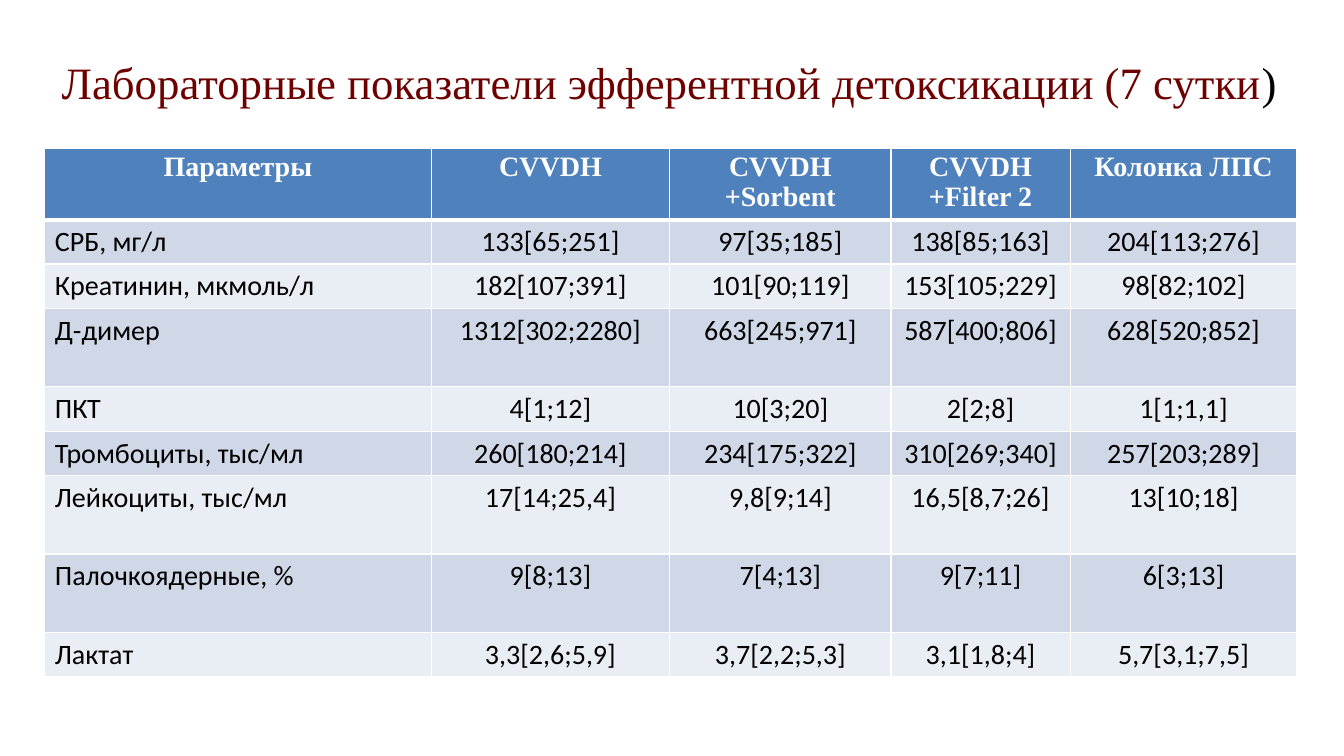
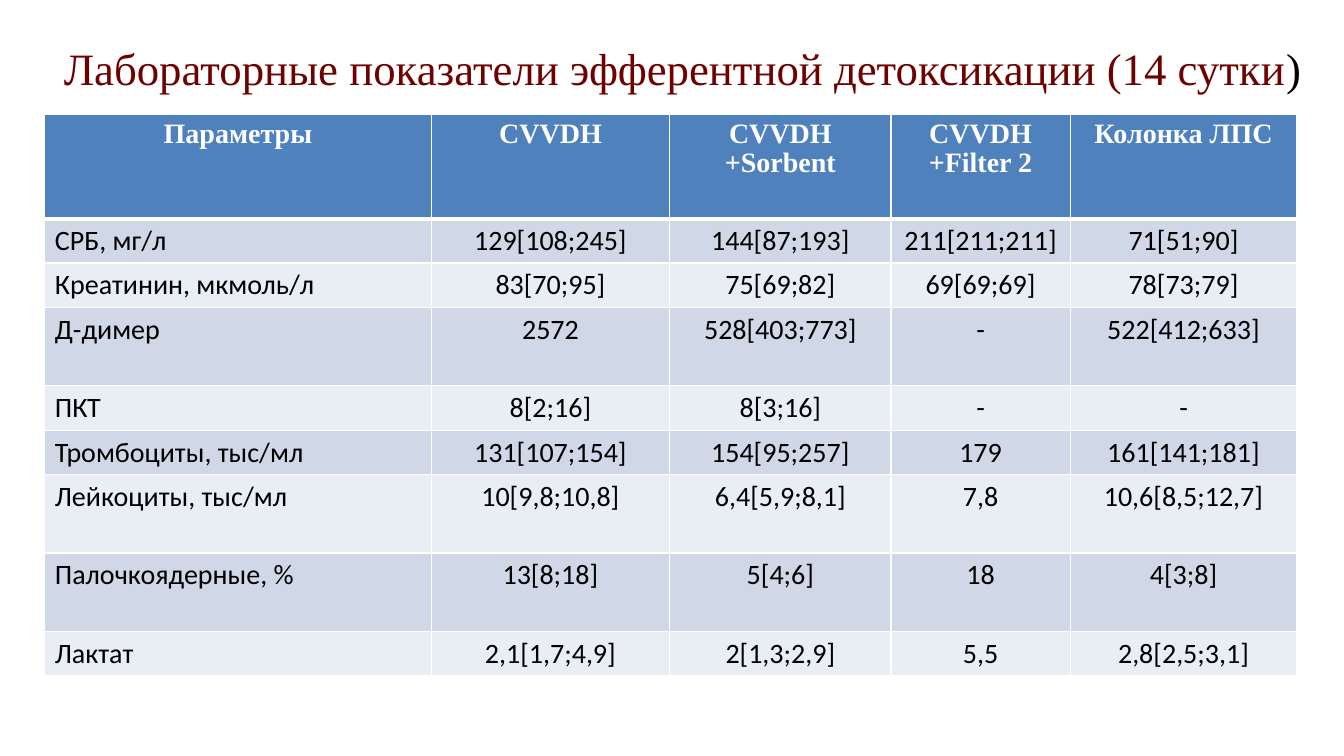
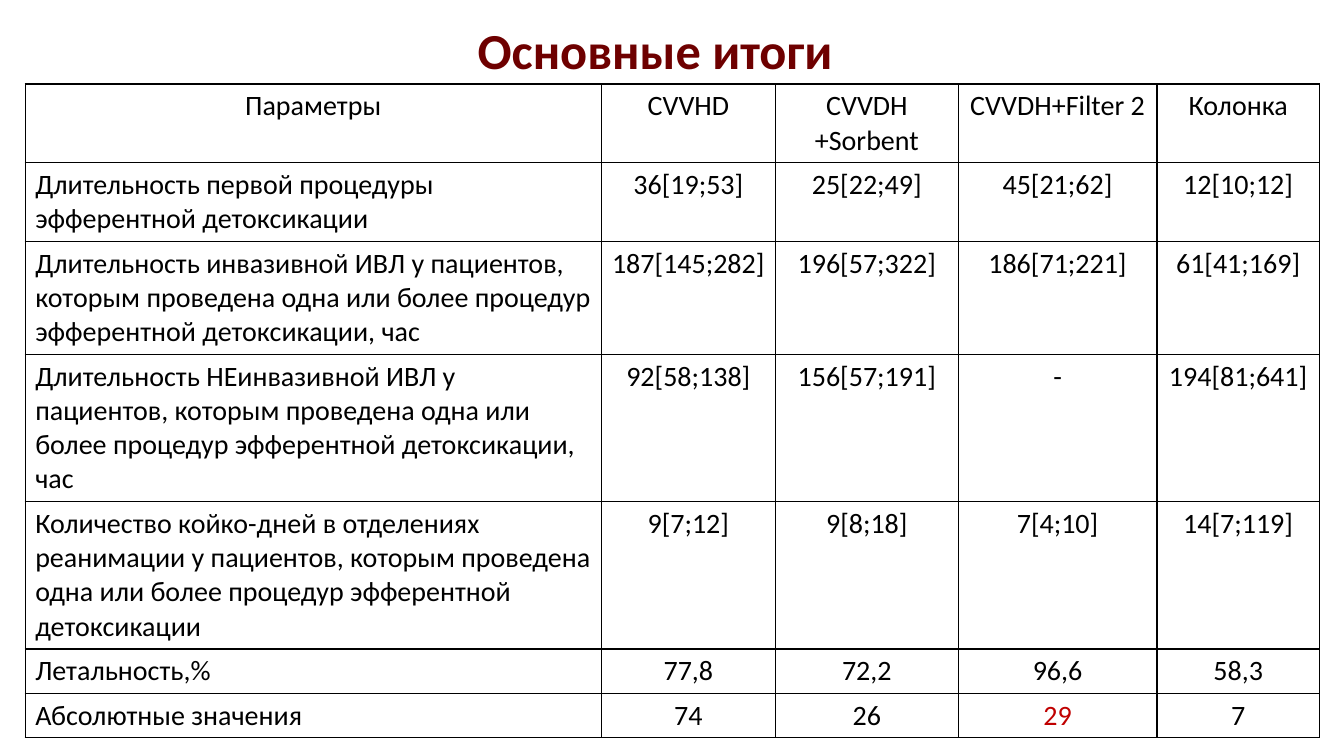
"""Build three slides with tables of laboratory indicators and overall results."""
from lxml.etree import SubElement
from pptx import Presentation
from pptx.dml.color import RGBColor
from pptx.enum.text import MSO_ANCHOR, MSO_AUTO_SIZE, PP_ALIGN
from pptx.oxml.ns import qn
from pptx.util import Pt

COLORS = {
    "title": "6E0000",
    "black": "000000",
    "white": "FFFFFF",
    "header": "4F81BD",
    "odd": "D0D8E8",
    "even": "E9EDF4",
    "alert": "C00000",
}
SERIF, SANS = "Times New Roman", "Calibri"
TEXT_SIZE = 20
LINE_HEIGHT, CELL_PADDING = 24.4, 7.2

LAB_STYLE = {
    "title_font": SERIF, "title_size": 32, "title_bold": False,
    "left": 32, "columns": [276, 170.5, 158, 128, 162],
    "lines": [1, 1, 2, 1, 1, 2, 2, 1],
    "header_font": SERIF, "header_color": "white", "header_bold": True,
    "header_spacing": 0.95, "header_border": 3,
    "fills": ["header", "odd", "even"], "border": "white",
}
RESULT_STYLE = {
    "title_font": SANS, "title_size": 36, "title_bold": True,
    "left": 18, "columns": [411.5, 124.5, 130.5, 142, 116],
    "lines": [2, 3, 4, 4, 1, 1],
    "header_font": SANS, "header_color": "black", "header_bold": False,
    "header_spacing": 1, "header_border": 1,
    "fills": None, "border": "black",
}
LAB_HEADER = ["Параметры", "CVVDH", "CVVDH\n+Sorbent", "CVVDH +Filter 2", "Колонка ЛПС"]

SLIDES = [
    {
        "style": LAB_STYLE,
        "title": ["Лабораторные показатели эфферентной детоксикации (7 сутки", ")"],
        "title_box": (15, 29.5, 926, 57),
        "top": 105.7, "header_height": 51.2,
        "rows": [
            LAB_HEADER,
            ["СРБ, мг/л", "133[65;251]", "97[35;185]", "138[85;163]", "204[113;276]"],
            ["Креатинин, мкмоль/л", "182[107;391]", "101[90;119]", "153[105;229]", "98[82;102]"],
            ["Д-димер", "1312[302;2280]", "663[245;971]", "587[400;806]", "628[520;852]"],
            ["ПКТ", "4[1;12]", "10[3;20]", "2[2;8]", "1[1;1,1]"],
            ["Тромбоциты, тыс/мл", "260[180;214]", "234[175;322]", "310[269;340]", "257[203;289]"],
            ["Лейкоциты, тыс/мл", "17[14;25,4]", "9,8[9;14]", "16,5[8,7;26]", "13[10;18]"],
            ["Палочкоядерные, %", "9[8;13]", "7[4;13]", "9[7;11]", "6[3;13]"],
            ["Лактат", "3,3[2,6;5,9]", "3,7[2,2;5,3]", "3,1[1,8;4]", "5,7[3,1;7,5]"],
        ],
    },
    {
        "style": LAB_STYLE,
        "title": ["Лабораторные показатели эфферентной детоксикации (14 сутки", ")"],
        "title_box": (34, 9.5, 907, 77),
        "top": 82, "header_height": 74.2,
        "rows": [
            LAB_HEADER,
            ["СРБ, мг/л", "129[108;245]", "144[87;193]", "211[211;211]", "71[51;90]"],
            ["Креатинин, мкмоль/л", "83[70;95]", "75[69;82]", "69[69;69]", "78[73;79]"],
            ["Д-димер", "2572", "528[403;773]", "-", "522[412;633]"],
            ["ПКТ", "8[2;16]", "8[3;16]", "-", "-"],
            ["Тромбоциты, тыс/мл", "131[107;154]", "154[95;257]", "179", "161[141;181]"],
            ["Лейкоциты, тыс/мл", "10[9,8;10,8]", "6,4[5,9;8,1]", "7,8", "10,6[8,5;12,7]"],
            ["Палочкоядерные, %", "13[8;18]", "5[4;6]", "18", "4[3;8]"],
            ["Лактат", "2,1[1,7;4,9]", "2[1,3;2,9]", "5,5", "2,8[2,5;3,1]"],
        ],
    },
    {
        "style": RESULT_STYLE,
        "title": ["Основные итоги"],
        "title_box": (43, 21.5, 850, 27.5),
        "top": 60, "header_height": 56,
        "alert": (6, 3),
        "rows": [
            ["Параметры", "CVVHD", "CVVDH\n+Sorbent", "CVVDH+Filter 2", "Колонка"],
            ["Длительность первой процедуры эфферентной детоксикации",
             "36[19;53]", "25[22;49]", "45[21;62]", "12[10;12]"],
            ["Длительность инвазивной ИВЛ у пациентов, которым проведена одна "
             "или более процедур эфферентной детоксикации, час",
             "187[145;282]", "196[57;322]", "186[71;221]", "61[41;169]"],
            ["Длительность НЕинвазивной ИВЛ у пациентов, которым проведена одна "
             "или более процедур эфферентной детоксикации, час",
             "92[58;138]", "156[57;191]", "-", "194[81;641]"],
            ["Количество койко-дней в отделениях реанимации у пациентов, которым "
             "проведена одна или более процедур эфферентной детоксикации",
             "9[7;12]", "9[8;18]", "7[4;10]", "14[7;119]"],
            ["Летальность,%", "77,8", "72,2", "96,6", "58,3"],
            ["Абсолютные значения", "74", "26", "29", "7"],
        ],
    },
]


def format_run(run, font, size, color, bold):
    run.font.name = font
    run.font.size = Pt(size)
    run.font.bold = bold
    run.font.color.rgb = RGBColor.from_string(COLORS[color])


def set_borders(cell, color, top, bottom):
    properties = cell._tc.get_or_add_tcPr()
    for side, width in (("L", 1), ("R", 1), ("T", top), ("B", bottom)):
        line = SubElement(properties, qn(f"a:ln{side}"), w=str(Pt(width)))
        fill = SubElement(line, qn("a:solidFill"))
        SubElement(fill, qn("a:srgbClr"), val=COLORS[color])


presentation = Presentation()
presentation.slide_width = Pt(960)
presentation.slide_height = Pt(540)

for content in SLIDES:
    style = content["style"]
    slide = presentation.slides.add_slide(presentation.slide_layouts[5])

    title = slide.shapes.title
    title.left, title.top, title.width, title.height = map(Pt, content["title_box"])
    title.text_frame.auto_size = MSO_AUTO_SIZE.NONE
    title.text_frame.vertical_anchor = MSO_ANCHOR.MIDDLE
    paragraph = title.text_frame.paragraphs[0]
    paragraph.alignment = PP_ALIGN.CENTER
    for text, color in zip(content["title"], ("title", "black")):
        run = paragraph.add_run()
        run.text = text
        format_run(run, style["title_font"], style["title_size"], color, style["title_bold"])

    rows, columns = content["rows"], style["columns"]
    heights = [content["header_height"]]
    heights += [CELL_PADDING + LINE_HEIGHT * count for count in style["lines"]]
    table = slide.shapes.add_table(
        len(rows), len(columns), Pt(style["left"]), Pt(content["top"]),
        Pt(sum(columns)), Pt(sum(heights))).table
    table.horz_banding = False
    for column, width in zip(table.columns, columns):
        column.width = Pt(width)

    for row_index, (values, height) in enumerate(zip(rows, heights)):
        table.rows[row_index].height = Pt(height)
        is_header = row_index == 0
        for column_index, value in enumerate(values):
            cell = table.cell(row_index, column_index)
            set_borders(cell, style["border"],
                        top=style["header_border"] if row_index == 1 else 1,
                        bottom=style["header_border"] if is_header else 1)
            if style["fills"]:
                fill_index = 0 if is_header else 2 - row_index % 2
                cell.fill.solid()
                cell.fill.fore_color.rgb = RGBColor.from_string(COLORS[style["fills"][fill_index]])
            else:
                cell.fill.background()

            cell.text_frame.text = value
            font, color, bold = SANS, "black", False
            if is_header:
                font, color, bold = style["header_font"], style["header_color"], style["header_bold"]
            elif content.get("alert") == (row_index, column_index):
                color = "alert"
            for paragraph in cell.text_frame.paragraphs:
                centered = is_header or column_index > 0
                paragraph.alignment = PP_ALIGN.CENTER if centered else PP_ALIGN.LEFT
                if is_header:
                    paragraph.line_spacing = float(style["header_spacing"])
                for run in paragraph.runs:
                    format_run(run, font, TEXT_SIZE, color, bold)

presentation.save("out.pptx")
